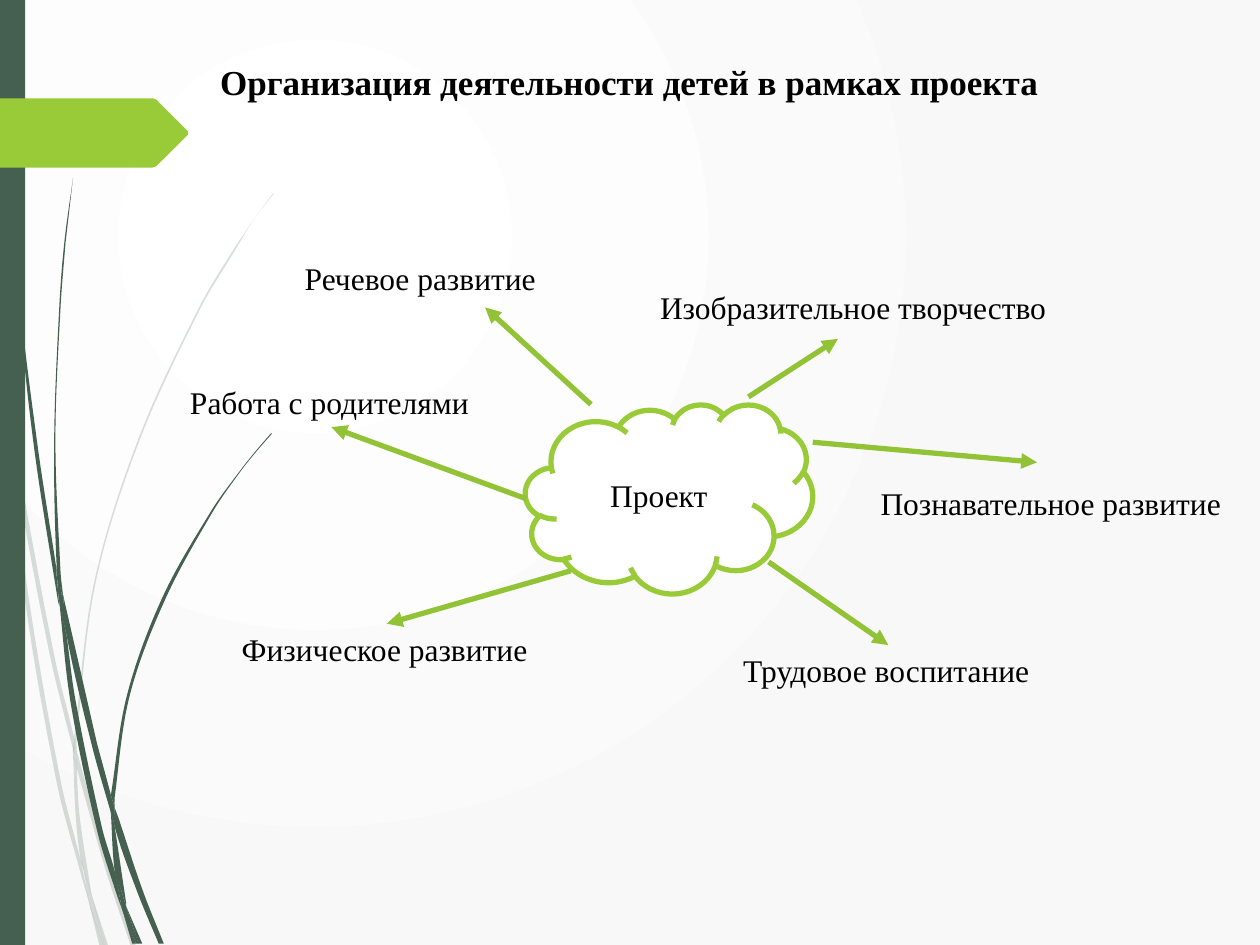
from dataclasses import dataclass
from math import dist

from lxml import etree
from pptx import Presentation
from pptx.dml.color import RGBColor
from pptx.enum.shapes import MSO_CONNECTOR, MSO_SHAPE
from pptx.enum.text import MSO_ANCHOR, MSO_AUTO_SIZE, PP_ALIGN
from pptx.oxml.ns import qn
from pptx.util import Inches, Pt

STRAIGHT = MSO_CONNECTOR.STRAIGHT
RECTANGLE, CLOUD = MSO_SHAPE.RECTANGLE, MSO_SHAPE.CLOUD
TOP, MIDDLE = MSO_ANCHOR.TOP, MSO_ANCHOR.MIDDLE
LEFT, CENTER = PP_ALIGN.LEFT, PP_ALIGN.CENTER
FIT_SHAPE = MSO_AUTO_SIZE.SHAPE_TO_FIT_TEXT
TITLE_ONLY = 5


@dataclass(frozen=True)
class Theme:
    """Hold the colours, font and sizes of the slide."""

    font: str = "Times New Roman"
    title_size: int = 20
    body_size: int = 18
    line_width: int = 3
    text: RGBColor = RGBColor(0, 0, 0)
    white: RGBColor = RGBColor(255, 255, 255)
    shade: RGBColor = RGBColor.from_string("F8F8F8")
    dark: RGBColor = RGBColor.from_string("455F51")
    green: RGBColor = RGBColor.from_string("99CB38")
    arrow: RGBColor = RGBColor.from_string("92C235")
    pale_opacity: int = 20


THEME = Theme()

PALE_BLADES = [
    ([(0, 2.99), (0.07, 3.44), (0.08, 3.5)], [(0.06, 3.22), (0, 2.82)]),
    ([(0.12, 3.76), (0.4, 5.22), (0.59, 5.99)], [(0.59, 5.86), (0.43, 5.2), (0.1, 3.45)]),
    ([(0.61, 6.1), (0.85, 6.94), (1.04, 7.51)],
     [(1.08, 7.51), (0.88, 6.92), (0.64, 6.07), (0.61, 5.96)]),
    ([(0.73, 7.11), (0.83, 7.51)], [(0.86, 7.51)]),
    ([(0.08, 3.5), (0.19, 4.7), (0.45, 6.21), (0.64, 6.93), (0.7, 7.14)],
     [(0.69, 7.07), (0.64, 6.83), (0.48, 6.19), (0.22, 4.69), (0.12, 3.76)]),
    ([(0.58, 5.99), (0.6, 6.46), (0.64, 6.83), (0.67, 6.92), (0.73, 7.11)],
     [(0.72, 7.06), (0.63, 6.46), (0.61, 6.1), (0.61, 6.08)]),
    ([(2.17, 1.53), (2.01, 1.75), (1.86, 1.97), (1.58, 2.44), (1.1, 3.48), (0.75, 4.61),
      (0.59, 5.84), (0.59, 5.86)],
     [(0.61, 5.96), (0.61, 5.84), (0.76, 4.62), (1.11, 3.49), (1.59, 2.45),
      (1.87, 1.98), (2.01, 1.75), (2.17, 1.54)]),
    ([(0.7, 7.14), (0.79, 7.51)], [(0.82, 7.51)]),
    ([(0.59, 5.86), (0.58, 5.99), (0.61, 6.08)], [(0.61, 6.1), (0.61, 5.96)]),
    ([(0.65, 6.83), (0.69, 7.07), (0.7, 7.14), (0.82, 7.51)],
     [(0.83, 7.51), (0.73, 7.11), (0.67, 6.92)]),
]
DARK_BLADES = [
    ([(0.02, 0), (0.03, 0.48), (0.05, 1.1), (0.14, 2.33), (0.27, 3.55), (0.46, 4.77),
      (0.47, 4.81)],
     [(0.45, 4.57), (0.45, 4.53), (0.3, 3.55), (0.15, 2.32), (0.06, 1.09), (0.04, 0.48),
      (0.03, 0)]),
    ([(0.5, 4.72), (0.53, 5.05), (0.73, 5.92), (0.88, 6.45)],
     [(0.88, 6.33), (0.88, 6.31), (0.77, 5.9)]),
    ([(0.91, 6.41), (0.91, 6.56), (1.09, 7.08), (1.26, 7.49)],
     [(1.3, 7.49), (1.13, 7.06), (0.94, 6.49)]),
    ([(0.47, 4.77), (0.56, 5.57), (0.77, 6.59), (0.92, 7.08), (0.97, 7.22)],
     [(0.96, 7.17), (0.91, 6.91), (0.81, 6.57), (0.6, 5.56), (0.53, 5.05)]),
    ([(0.58, 1.41), (0.51, 1.93), (0.47, 2.45), (0.43, 3.49), (0.45, 4.49), (0.49, 4.72)],
     [(0.5, 4.72), (0.48, 4.53), (0.44, 3.49), (0.48, 2.45), (0.52, 1.93)]),
    ([(1, 7.19), (1.1, 7.49)], [(1.13, 7.49)]),
    ([(0.45, 4.49), (0.45, 4.53), (0.47, 4.77), (0.53, 5.05)], [(0.5, 4.72), (0.49, 4.72)]),
    ([(2.15, 3.44), (2.03, 3.58), (1.91, 3.73), (1.68, 4.05), (1.29, 4.74), (1.01, 5.51),
      (0.88, 6.31)],
     [(0.91, 6.41), (0.91, 6.33), (1.03, 5.52), (1.31, 4.76), (1.69, 4.06), (1.91, 3.74),
      (2.03, 3.59), (2.16, 3.44)]),
    ([(0.97, 7.22), (1.05, 7.49)], [(1.08, 7.49)]),
    ([(0.88, 6.45), (0.91, 6.91), (0.96, 7.06), (1, 7.19)],
     [(1, 7.16), (0.91, 6.56), (0.9, 6.51)]),
    ([(0.88, 6.31), (0.88, 6.45), (0.9, 6.51), (0.91, 6.56)], [(0.91, 6.41)]),
    ([(0.91, 6.91), (0.96, 7.17), (0.97, 7.22), (1.08, 7.49)],
     [(1.1, 7.49), (1, 7.19), (0.96, 7.06)]),
]
TAG_OUTLINE = [(0, 0.78), (1.21, 0.78), (1.24, 0.79), (1.49, 1.04), (1.49, 1.07),
               (1.24, 1.32), (1.21, 1.33), (0, 1.33)]
DIRECTIONS = [
    ("Речевое развитие", (2.32, 2.01, 2.06), (4.69, 3.21), (3.85, 2.44)),
    ("Изобразительное творчество", (5.14, 2.24, 3.3), (5.94, 3.15), (6.65, 2.69)),
    ("Работа с родителями", (1.41, 2.99, 2.44), (4.18, 3.96), (2.63, 3.39)),
    ("Физическое развитие", (1.82, 4.95, 2.49), (4.53, 4.53), (3.07, 4.95)),
    ("Трудовое воспитание", (5.8, 5.12, 2.5), (6.1, 4.46), (7.05, 5.12)),
    ("Познавательное развитие", (6.89, 3.79, 2.93), (6.45, 3.51), (8.23, 3.67)),
]


def paint_background(page):
    """Give the page a circular gradient centred in its upper left quarter."""
    fill = page.background.fill
    fill.gradient()
    for stop, color, position in zip(fill.gradient_stops, (THEME.white, THEME.shade), (0, 1)):
        stop.color.rgb = color
        stop.position = position
    linear = page._element.find(".//" + qn("a:lin"))
    circle = etree.Element(qn("a:path"), path="circle")
    etree.SubElement(circle, qn("a:fillToRect"), l="50000", t="50000", r="100000", b="100000")
    linear.getparent().replace(linear, circle)


def fill_plain(shape, color):
    """Fill a shape with one colour and remove its line and shadow."""
    shape.shadow.inherit = False
    shape.fill.solid()
    shape.fill.fore_color.rgb = color
    shape.line.fill.background()


def add_outline(page, points, color):
    """Add a closed filled outline through points given in inches."""
    corners = [(Inches(x), Inches(y)) for x, y in points]
    builder = page.shapes.build_freeform(*corners[0])
    builder.add_line_segments(corners[1:], close=True)
    shape = builder.convert_to_shape()
    fill_plain(shape, color)
    return shape


def handles(side):
    """Return the two Bezier handles of each segment along a smooth side."""
    padded = [side[0], *side, side[-1]]
    pairs = []
    for before, start, end, after in zip(padded, padded[1:], padded[2:], padded[3:]):
        length = dist(start, end) / 3
        leave = length / dist(before, end)
        arrive = length / dist(start, after)
        pairs.append([
            tuple(s + (e - b) * leave for b, s, e in zip(before, start, end)),
            tuple(e - (a - s) * arrive for s, e, a in zip(start, end, after))])
    return pairs


def add_blade(page, down, up, opacity=100):
    """Add a piece of grass with two smooth sides joined by straight ends."""
    shape = add_outline(page, down + up, THEME.dark)
    lines = shape._element.findall(".//" + qn("a:lnTo"))
    for line, pair in zip(lines, handles(down) + [None] + handles(up)):
        if pair is None:
            continue
        curve = etree.Element(qn("a:cubicBezTo"))
        for x, y in pair:
            etree.SubElement(curve, qn("a:pt"), x=str(Inches(x) - shape.left),
                             y=str(Inches(y) - shape.top))
        curve.append(line[0])
        line.getparent().replace(line, curve)
    if opacity < 100:
        tone = shape._element.spPr.find(qn("a:solidFill"))[0]
        etree.SubElement(tone, qn("a:alpha"), val=str(opacity * 1000))


def add_decoration(page):
    """Add the grass, the side bar and the green tag."""
    for down, up in PALE_BLADES:
        add_blade(page, down, up, THEME.pale_opacity)
    for down, up in DARK_BLADES:
        add_blade(page, down, up)
    bar = page.shapes.add_shape(RECTANGLE, 0, 0, Inches(0.2), Inches(7.5))
    fill_plain(bar, THEME.dark)
    add_outline(page, TAG_OUTLINE, THEME.green)


def write(shape, text, size, align=LEFT, anchor=TOP, bold=False):
    """Put one formatted line of text in a shape."""
    frame = shape.text_frame
    frame.text = text
    frame.word_wrap = False
    frame.vertical_anchor = anchor
    para = frame.paragraphs[0]
    para.alignment = align
    font = para.runs[0].font
    font.name, font.size, font.bold = THEME.font, Pt(size), bold
    font.color.rgb = THEME.text


def add_title(page, text):
    """Place and format the title."""
    title = page.shapes.title
    title.left, title.top, title.width, title.height = map(Inches, (1.62, 0.43, 6.75, 0.44))
    write(title, text, THEME.title_size, CENTER, bold=True)
    title.text_frame.auto_size = FIT_SHAPE


def add_cloud(page, text):
    """Add the central cloud."""
    cloud = page.shapes.add_shape(CLOUD, *map(Inches, (4.17, 3.21, 2.28, 1.5)))
    fill_plain(cloud, THEME.white)
    cloud.line.color.rgb = THEME.green
    cloud.line.width = Pt(THEME.line_width)
    write(cloud, text, THEME.body_size, CENTER, MIDDLE)


def add_label(page, text, left, top, width):
    """Add the label of one direction."""
    box = page.shapes.add_textbox(*map(Inches, (left, top, width, 0.4)))
    write(box, text, THEME.body_size)
    box.text_frame.auto_size = FIT_SHAPE


def add_arrow(page, start, end):
    """Add an arrow from the cloud to a label."""
    arrow = page.shapes.add_connector(STRAIGHT, *map(Inches, start + end))
    arrow.line.color.rgb = THEME.arrow
    arrow.line.width = Pt(THEME.line_width)
    properties = arrow._element.spPr
    etree.SubElement(properties.find(qn("a:ln")), qn("a:tailEnd"), type="triangle")
    etree.SubElement(properties, qn("a:effectLst"))


def main():
    """Build the slide and save it."""
    deck = Presentation()
    deck.slide_width, deck.slide_height = Inches(10), Inches(7.5)
    page = deck.slides.add_slide(deck.slide_layouts[TITLE_ONLY])
    paint_background(page)
    add_decoration(page)
    add_cloud(page, "Проект")
    add_title(page, "Организация деятельности детей в рамках проекта")
    for text, place, _, _ in DIRECTIONS:
        add_label(page, text, *place)
    for _, _, start, end in DIRECTIONS:
        add_arrow(page, start, end)
    deck.save("out.pptx")


if __name__ == "__main__":
    main()
